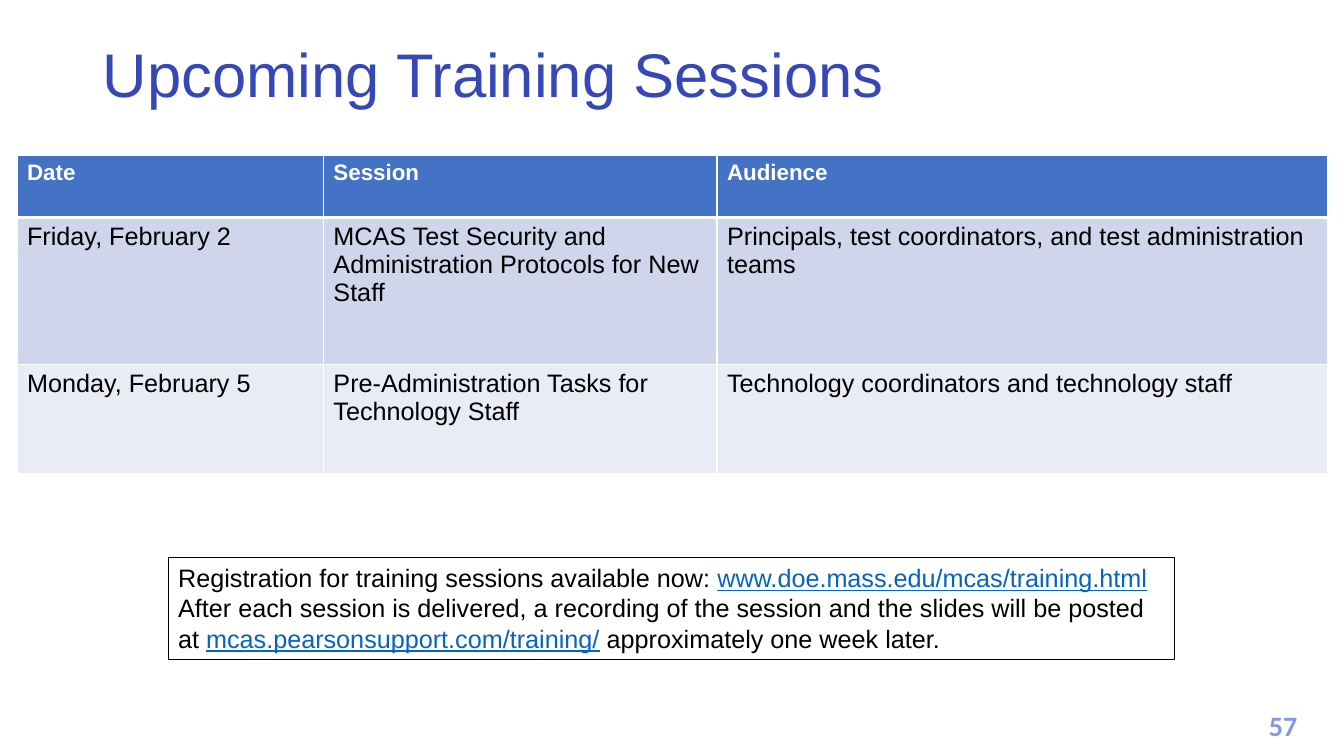
"""Build the slide that lists the upcoming training sessions."""
from dataclasses import dataclass

from lxml.etree import SubElement
from pptx import Presentation
from pptx.dml.color import RGBColor as Rgb
from pptx.enum.text import MSO_ANCHOR as Anchor, MSO_AUTO_SIZE as AutoSize, PP_ALIGN as Align
from pptx.oxml.ns import qn
from pptx.util import Cm, Pt


@dataclass(frozen=True)
class Theme:
    body_font: str = "Arial"
    number_font: str = "Calibri"
    title: str = "3647B6"
    number: str = "8397E7"
    text: str = "000000"
    paper: str = "FFFFFF"
    link: str = "0563C1"
    header: str = "4472C4"
    bands: tuple[str, ...] = ("CFD5EA", "E9EBF5")
    title_size: int = 44
    number_size: int = 20
    body_size: int = 18
    header_size: int = 16


@dataclass(frozen=True)
class Area:
    left: float
    top: float
    width: float
    height: float

    def lengths(self) -> tuple:
        return Cm(self.left), Cm(self.top), Cm(self.width), Cm(self.height)


@dataclass(frozen=True)
class Session:
    date: str
    name: str
    audience: str
    height: float

    def texts(self) -> tuple[str, ...]:
        return self.date, self.name, self.audience


@dataclass(frozen=True)
class Phrase:
    text: str
    is_link: bool = False


THEME = Theme()
TITLE_AREA = Area(2.34, 0.51, 29.21, 2.9)
TABLE_AREA = Area(0.43, 3.91, 33.03, 8.02)
NOTE_AREA = Area(4.24, 14.05, 25.35, 2.57)
NUMBER_AREA = Area(31.55, 17.73, 1.57, 1.12)
COLUMN_WIDTHS = (7.72, 9.92, 15.39)
HEADER = Session("Date", "Session", "Audience", 1.57)
SESSIONS = (
    Session("Friday, February 2",
            "MCAS Test Security and Administration Protocols for New Staff",
            "Principals, test coordinators, and test administration teams", 3.71),
    Session("Monday, February 5", "Pre-Administration Tasks for Technology Staff",
            "Technology coordinators and technology staff", 2.74),
)
NOTE = (
    (Phrase("Registration for training sessions available now: "),
     Phrase("www.doe.mass.edu/mcas/training.html", True)),
    (Phrase("After each session is delivered, a recording of the session "
            "and the slides will be posted at "),
     Phrase("mcas.pearsonsupport.com/training/", True),
     Phrase(" approximately one week later.")),
)


def style_font(font, size: int, color: str, name: str = THEME.body_font,
               bold: bool = False) -> None:
    font.name, font.size, font.bold = name, Pt(size), bold
    font.color.rgb = Rgb.from_string(color)


def paint(fill, color: str) -> None:
    fill.solid()
    fill.fore_color.rgb = Rgb.from_string(color)


def add_borders(cell, top: int, bottom: int) -> None:
    properties = cell._tc.get_or_add_tcPr()
    for side, width in {"L": 1, "R": 1, "T": top, "B": bottom}.items():
        line = SubElement(properties, qn(f"a:ln{side}"), w=str(Pt(width)))
        SubElement(SubElement(line, qn("a:solidFill")), qn("a:srgbClr"), val=THEME.paper)


def add_title(slide) -> None:
    title = slide.shapes.title
    title.left, title.top, title.width, title.height = TITLE_AREA.lengths()
    frame = title.text_frame
    frame.text = "Upcoming Training Sessions"
    frame.vertical_anchor, frame.auto_size = Anchor.MIDDLE, AutoSize.NONE
    para = frame.paragraphs[0]
    para.alignment, para.line_spacing = Align.LEFT, 0.9
    style_font(para.runs[0].font, THEME.title_size, THEME.title)


def add_sessions(slide) -> None:
    rows = (HEADER, *SESSIONS)
    table = slide.shapes.add_table(len(rows), len(COLUMN_WIDTHS), *TABLE_AREA.lengths()).table
    for column, width in zip(table.columns, COLUMN_WIDTHS):
        column.width = Cm(width)
    for index, (row, session) in enumerate(zip(table.rows, rows)):
        row.height = Cm(session.height)
        is_header = index == 0
        for cell, text in zip(row.cells, session.texts()):
            cell.text = text
            font = cell.text_frame.paragraphs[0].runs[0].font
            add_borders(cell, 3 if index == 1 else 1, 3 if is_header else 1)
            if is_header:
                paint(cell.fill, THEME.header)
                style_font(font, THEME.header_size, THEME.paper, bold=True)
            else:
                paint(cell.fill, THEME.bands[(index - 1) % len(THEME.bands)])
                style_font(font, THEME.body_size, THEME.text)


def add_note(slide) -> None:
    box = slide.shapes.add_textbox(*NOTE_AREA.lengths())
    paint(box.fill, THEME.paper)
    box.line.color.rgb = Rgb.from_string(THEME.text)
    box.line.width = Pt(0.75)
    frame = box.text_frame
    frame.word_wrap, frame.auto_size = True, AutoSize.SHAPE_TO_FIT_TEXT
    for index, phrases in enumerate(NOTE):
        para = frame.add_paragraph() if index else frame.paragraphs[0]
        for phrase in phrases:
            span = para.add_run()
            span.text = phrase.text
            style_font(span.font, THEME.body_size, THEME.link if phrase.is_link else THEME.text)
            span.font.underline = phrase.is_link


def add_page_number(slide) -> None:
    frame = slide.shapes.add_textbox(*NUMBER_AREA.lengths()).text_frame
    frame.text = "57"
    frame.word_wrap = True
    para = frame.paragraphs[0]
    para.alignment = Align.CENTER
    style_font(para.runs[0].font, THEME.number_size, THEME.number, THEME.number_font, True)


def main() -> None:
    deck = Presentation()
    deck.slide_width, deck.slide_height = Cm(33.87), Cm(19.05)
    page = deck.slides.add_slide(deck.slide_layouts.get_by_name("Title Only"))
    add_page_number(page)
    add_title(page)
    add_sessions(page)
    add_note(page)
    deck.save("out.pptx")


if __name__ == "__main__":
    main()
